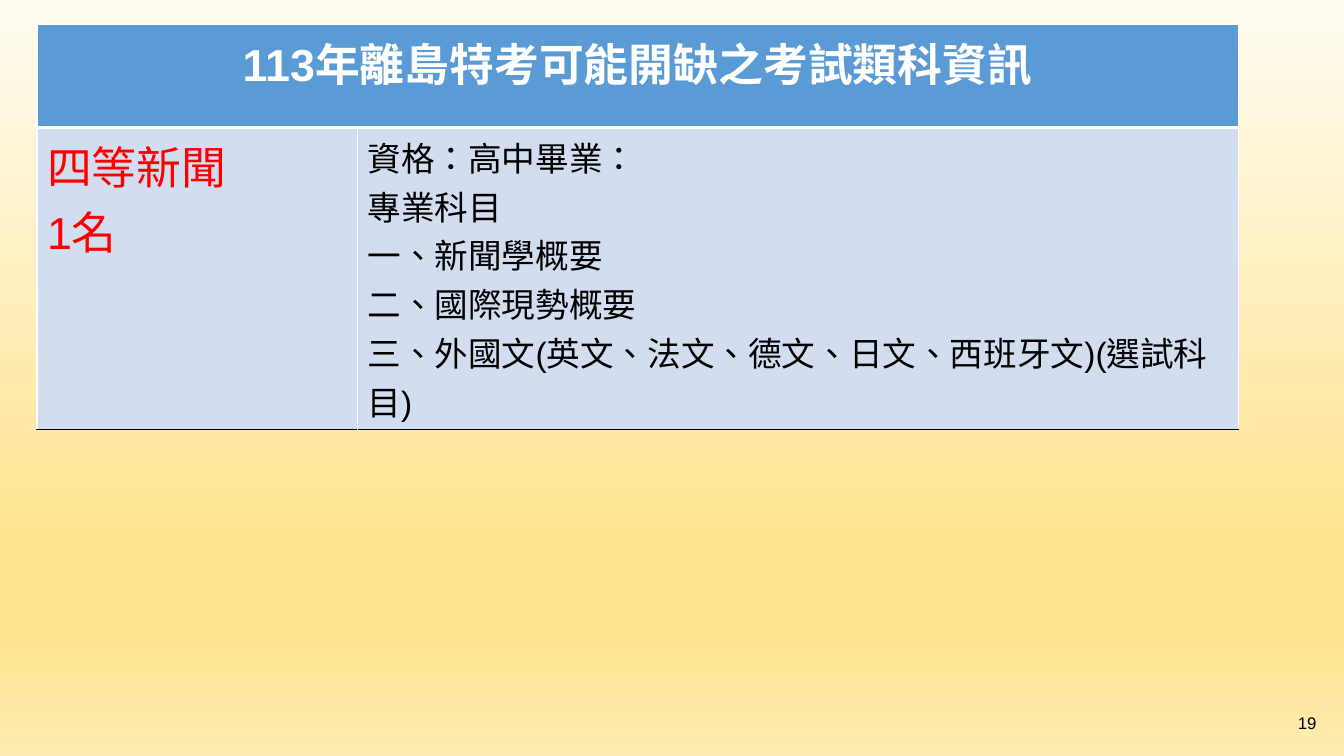
from dataclasses import dataclass

from lxml.etree import SubElement
from pptx import Presentation
from pptx.dml.color import RGBColor
from pptx.enum.lang import MSO_LANGUAGE_ID as Language
from pptx.enum.text import MSO_ANCHOR as Anchor, PP_ALIGN as Align
from pptx.oxml.ns import qn
from pptx.slide import Slide
from pptx.table import Table, _Cell as Cell
from pptx.text.text import TextFrame
from pptx.util import Pt


@dataclass(frozen=True)
class Theme:
    font: str = "Arial"
    header_fill: str = "5B9BD5"
    body_fill: str = "D2DEEF"
    white: str = "FFFFFF"
    black: str = "000000"
    red: str = "FF0000"
    large: float = 32
    medium: float = 24
    small: float = 12
    background: tuple[tuple[int, str], ...] = (
        (0, "FFFCF2"), (74, "FFE38C"), (83, "FFE38C"), (100, "FFECB2"))


@dataclass(frozen=True)
class Border:
    color: str
    width: float


@dataclass(frozen=True)
class TextStyle:
    size: float
    color: str
    bold: bool = False
    align: Align = Align.LEFT


@dataclass(frozen=True)
class CellContent:
    row: int
    column: int
    lines: tuple[str, ...]
    fill: str
    style: TextStyle


THEME = Theme()
THIN = Border(THEME.white, 1)
HEADER_RULE = Border(THEME.white, 3)
BOTTOM_RULE = Border(THEME.black, 1)
COLUMN_WIDTHS = (229, 629.3)
ROW_HEIGHTS = (73.4, 216)

CONTENTS = (
    CellContent(0, 0, ("113年離島特考可能開缺之考試類科資訊",), THEME.header_fill,
                TextStyle(THEME.large, THEME.white, True, Align.CENTER)),
    CellContent(1, 0, ("四等新聞", "1名"), THEME.body_fill,
                TextStyle(THEME.large, THEME.red)),
    CellContent(1, 1, (
        "資格：高中畢業：",
        "專業科目",
        "一、新聞學概要",
        "二、國際現勢概要",
        "三、外國文(英文、法文、德文、日文、西班牙文)(選試科目)",
    ), THEME.body_fill, TextStyle(THEME.medium, THEME.black)),
)


def paint_background(slide: Slide) -> None:
    fill = slide.background.fill
    fill.gradient()
    fill.gradient_angle = 270
    stops = slide.element.find(".//" + qn("a:gsLst"))
    for stop in list(stops):
        stops.remove(stop)
    for percent, color in THEME.background:
        stop = SubElement(stops, qn("a:gs"), pos=str(percent * 1000))
        SubElement(stop, qn("a:srgbClr"), val=color)


def write_lines(text_frame: TextFrame, lines: tuple[str, ...], style: TextStyle) -> None:
    text_frame.text = "\n".join(lines)
    for paragraph in text_frame.paragraphs:
        paragraph.alignment = style.align
        font = paragraph.font
        font.name = THEME.font
        font.size = Pt(style.size)
        font.bold = style.bold
        font.color.rgb = RGBColor.from_string(style.color)
        for run in paragraph.runs:
            run.font.language_id = Language.TRADITIONAL_CHINESE


def draw_borders(cell: Cell, top: Border, bottom: Border) -> None:
    properties = cell._tc.get_or_add_tcPr()
    sides = {"L": THIN, "R": THIN, "T": top, "B": bottom}
    for index, (side, border) in enumerate(sides.items()):
        line = SubElement(properties, qn(f"a:ln{side}"), w=str(Pt(border.width)))
        solid = SubElement(line, qn("a:solidFill"))
        SubElement(solid, qn("a:srgbClr"), val=border.color)
        properties.insert(index, line)


def fill_table(table: Table) -> None:
    table.first_row = False
    table.horz_banding = False
    for column, width in zip(table.columns, COLUMN_WIDTHS):
        column.width = Pt(width)
    for row, height in zip(table.rows, ROW_HEIGHTS):
        row.height = Pt(height)
    table.cell(0, 0).merge(table.cell(0, 1))
    for content in CONTENTS:
        cell = table.cell(content.row, content.column)
        cell.fill.solid()
        cell.fill.fore_color.rgb = RGBColor.from_string(content.fill)
        write_lines(cell.text_frame, content.lines, content.style)
    for cell in table.rows[0].cells:
        draw_borders(cell, THIN, HEADER_RULE)
    for cell in table.rows[1].cells:
        draw_borders(cell, HEADER_RULE, BOTTOM_RULE)


def add_page_number(slide: Slide, number: str) -> None:
    box = slide.shapes.add_textbox(Pt(848.9), Pt(501.8), Pt(98.6), Pt(28.8))
    box.text_frame.word_wrap = True
    box.text_frame.vertical_anchor = Anchor.MIDDLE
    write_lines(box.text_frame, (number,),
                TextStyle(THEME.small, THEME.black, align=Align.RIGHT))


def main() -> None:
    presentation = Presentation()
    presentation.slide_width = Pt(960)
    presentation.slide_height = Pt(540)
    slide = presentation.slides.add_slide(presentation.slide_layouts[6])
    paint_background(slide)
    add_page_number(slide, "19")
    frame = slide.shapes.add_table(
        len(ROW_HEIGHTS), len(COLUMN_WIDTHS), Pt(26.4), Pt(17.6),
        Pt(sum(COLUMN_WIDTHS)), Pt(sum(ROW_HEIGHTS)))
    fill_table(frame.table)
    presentation.save("out.pptx")


if __name__ == "__main__":
    main()
